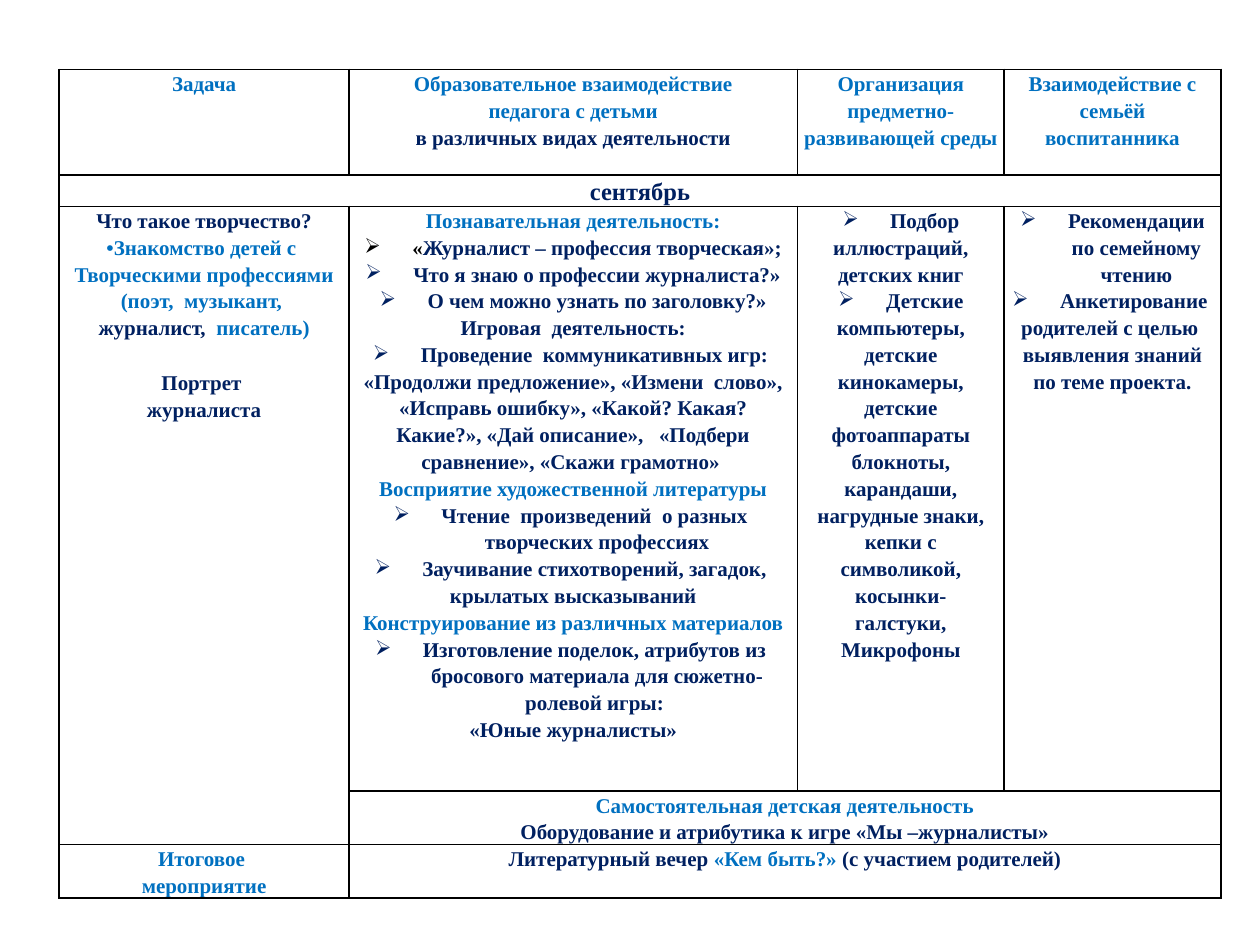
import dataclasses
import typing

import pptx
import pptx.dml.color
import pptx.enum.text
import pptx.oxml
import pptx.oxml.ns
import pptx.util

Inches = pptx.util.Inches
Pt = pptx.util.Pt

BLUE, NAVY, BLACK = "0070C0", "002060", "000000"
COLUMN_WIDTHS = (2.3, 3.56, 1.64, 1.72)
ROW_HEIGHTS = (0.84, 0.16, 4.64, 0.18, 0.18)
BORDER_WIDTH = Pt(1)
BULLET_INDENT = Inches(0.38)
FONT_FORMAT = {"name": "Times New Roman", "bold": True}
LINE_FORMAT = {"alignment": pptx.enum.text.PP_ALIGN.CENTER, "line_spacing": 1.15}
CELL_FORMAT = {
    "margin_left": Inches(0.05),
    "margin_right": Inches(0.05),
    "margin_top": 0,
    "margin_bottom": 0,
}
TABLE_FORMAT = {"first_row": False, "horz_banding": False}


class Span(typing.NamedTuple):
    text: str
    color: str = NAVY


@dataclasses.dataclass
class Line:
    spans: list[Span]
    bullet: bool = False
    size: float = 12
    space_before: float = 0


@dataclasses.dataclass
class Block:
    row: int
    column: int
    lines: list[Line]
    row_span: int = 1
    column_span: int = 1


def navy(*texts: str) -> list[Line]:
    return [Line([Span(text)]) for text in texts]


def blue(*texts: str) -> list[Line]:
    return [Line([Span(text, BLUE)]) for text in texts]


def bullets(*texts: str) -> list[Line]:
    return [Line([Span(text)], bullet=True) for text in texts]


BLOCKS = [
    Block(0, 0, blue("Задача")),
    Block(0, 1, blue("Образовательное взаимодействие", "педагога с детьми")
          + navy("в различных видах деятельности")),
    Block(0, 2, blue("Организация предметно-развивающей среды")),
    Block(0, 3, blue("Взаимодействие с семьёй воспитанника")),
    Block(1, 0, [Line([Span("сентябрь")], size=14)], column_span=4),
    Block(2, 0, navy("Что такое творчество?")
          + blue("•Знакомство детей с ", "Творческими профессиями (поэт,  музыкант, ")
          + [Line([Span("журналист,  "), Span("писатель)", BLUE)]),
             Line([Span("Портрет ")], space_before=16)]
          + navy("журналиста"), row_span=2),
    Block(2, 1, blue("Познавательная деятельность:")
          + [Line([Span("«", BLACK), Span("Журналист – профессия творческая»;")], bullet=True)]
          + bullets("Что я знаю о профессии журналиста?»", "О чем можно узнать по заголовку?»")
          + navy("Игровая  деятельность:")
          + bullets("Проведение  коммуникативных игр: ")
          + navy("«Продолжи предложение», «Измени  слово», «Исправь ошибку», "
                 "«Какой? Какая? Какие?», «Дай описание»,   «Подбери сравнение», "
                 "«Скажи грамотно» ")
          + blue("Восприятие художественной литературы")
          + bullets("Чтение  произведений  о разных  творческих профессиях",
                    "Заучивание стихотворений, загадок, ")
          + navy("крылатых высказываний")
          + blue("Конструирование из различных материалов")
          + bullets("Изготовление поделок, атрибутов из  бросового материала "
                    "для сюжетно-ролевой игры: ")
          + navy("«Юные журналисты»")),
    Block(2, 2, bullets("Подбор") + navy("иллюстраций,", "детских книг")
          + bullets("Детские")
          + navy("компьютеры,", "детские", "кинокамеры,", "детские", "фотоаппараты",
                 "блокноты,", "карандаши,", "нагрудные знаки,", "кепки с",
                 "символикой,", "косынки-", "галстуки,", "Микрофоны")),
    Block(2, 3, bullets("Рекомендации по семейному чтению", "Анкетирование ")
          + navy("родителей с целью ", "выявления знаний по теме проекта.")),
    Block(3, 1, blue("Самостоятельная детская деятельность")
          + navy("Оборудование и атрибутика к игре «Мы –журналисты»"), column_span=3),
    Block(4, 0, blue("Итоговое ", "мероприятие")),
    Block(4, 1, [Line([Span("Литературный вечер "), Span("«Кем быть?» ", BLUE),
                       Span("(с участием родителей)")])], column_span=3),
]


def apply_format(target: typing.Any, values: dict[str, typing.Any]) -> None:
    for name, value in values.items():
        setattr(target, name, value)


def set_color(font: typing.Any, color: str) -> None:
    font.color.rgb = pptx.dml.color.RGBColor.from_string(color)


def add_bullet(paragraph: typing.Any) -> None:
    properties = paragraph._p.get_or_add_pPr()
    properties.set("marL", str(BULLET_INDENT))
    properties.set("indent", str(-BULLET_INDENT))
    namespace = pptx.oxml.ns.nsdecls("a")
    properties.append(pptx.oxml.parse_xml(f'<a:buChar {namespace} char="➢"/>'))


def style_cell(cell: typing.Any) -> None:
    properties = cell._tc.get_or_add_tcPr()
    namespace = pptx.oxml.ns.nsdecls("a")
    for side in "LRTB":
        properties.append(pptx.oxml.parse_xml(
            f'<a:ln{side} {namespace} w="{BORDER_WIDTH}"><a:solidFill>'
            f'<a:srgbClr val="{BLACK}"/></a:solidFill></a:ln{side}>'))
    cell.fill.background()
    apply_format(cell, CELL_FORMAT)


def write_line(paragraph: typing.Any, line: Line) -> None:
    apply_format(paragraph, LINE_FORMAT)
    if line.space_before:
        paragraph.space_before = Pt(line.space_before)
    if line.bullet:
        add_bullet(paragraph)
    for span in line.spans:
        run = paragraph.add_run()
        run.text = span.text
        apply_format(run.font, FONT_FORMAT | {"size": Pt(line.size)})
        set_color(run.font, span.color)


def write_block(table: typing.Any, block: Block) -> None:
    cell = table.cell(block.row, block.column)
    if block.row_span * block.column_span > 1:
        cell.merge(table.cell(block.row + block.row_span - 1,
                              block.column + block.column_span - 1))
    frame = cell.text_frame
    for index, line in enumerate(block.lines):
        write_line(frame.add_paragraph() if index else frame.paragraphs[0], line)


def main() -> None:
    """Build the monthly plan table and save the deck."""
    deck = pptx.Presentation()
    apply_format(deck, {"slide_width": Inches(10), "slide_height": Inches(7.5)})
    page = deck.slides.add_slide(deck.slide_layouts[6])
    box = page.shapes.add_table(
        len(ROW_HEIGHTS), len(COLUMN_WIDTHS),
        Inches(0.47), Inches(0.55), Inches(9.22), Inches(6.68))
    table = box.table
    apply_format(table, TABLE_FORMAT)
    for column, width in zip(table.columns, COLUMN_WIDTHS):
        column.width = Inches(width)
    for row, height in zip(table.rows, ROW_HEIGHTS):
        row.height = Inches(height)
    box.height = Inches(6.68)
    for cell in table.iter_cells():
        style_cell(cell)
    for block in BLOCKS:
        write_block(table, block)
    deck.save("out.pptx")


if __name__ == "__main__":
    main()
